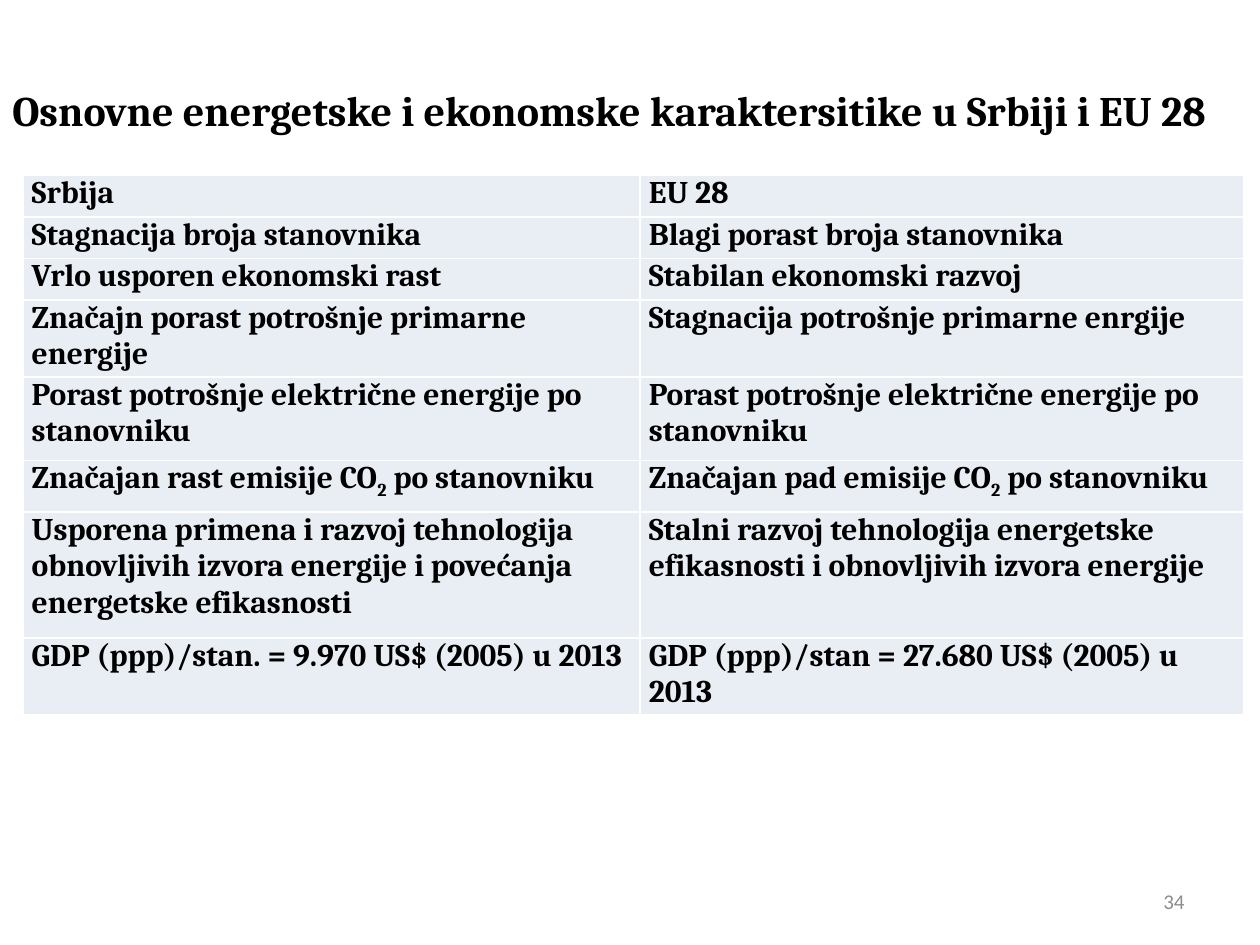
from pptx import Presentation
from pptx.dml.color import RGBColor
from pptx.enum import text
from pptx.oxml import parse_xml
from pptx.oxml import ns
from pptx.util import Cm, Pt

TITLE = "Osnovne energetske i ekonomske karaktersitike u Srbiji i EU 28"
PAGE_NUMBER = "34"
COMPARISON = [
    (0.84, ["Srbija"], ["EU 28"]),
    (0.84, ["Stagnacija broja stanovnika"], ["Blagi porast broja stanovnika"]),
    (0.84, ["Vrlo usporen ekonomski rast"], ["Stabilan ekonomski razvoj"]),
    (1.55, ["Značajn porast potrošnje primarne energije"],
     ["Stagnacija potrošnje primarne enrgije"]),
    (1.68, ["Porast potrošnje električne energije po stanovniku"],
     ["Porast potrošnje električne energije po stanovniku"]),
    (1.04, ["Značajan rast emisije CO", "2", " po stanovniku"],
     ["Značajan pad emisije CO", "2", " po stanovniku"]),
    (2.54, ["Usporena primena i razvoj tehnologija obnovljivih izvora energije "
            "i povećanja energetske efikasnosti"],
     ["Stalni razvoj tehnologija energetske efikasnosti i obnovljivih izvora energije"]),
    (1.55, ["GDP (ppp)/stan. = 9.970 US$ (2005) u 2013"],
     ["GDP (ppp)/stan = 27.680 US$ (2005) u 2013"]),
]
COLUMN_WIDTHS = (12.44, 12.17)

THEME = {
    "title": ("Cambria", 24, "000000", True),
    "body": ("Cambria", 18, "000000", True),
    "number": ("Calibri", 12, "8C8C8C", False),
    "cell": "E9EDF4",
    "border": "FFFFFF",
}


def add_run(paragraph, words, style):
    run = paragraph.add_run()
    run.text = words
    font = run.font
    font.name, size, color, font.bold = THEME[style]
    font.size = Pt(size)
    font.color.rgb = RGBColor.from_string(color)
    return run


def add_label(slide, words, style, box, align):
    frame = slide.shapes.add_textbox(*map(Cm, box)).text_frame
    frame.word_wrap = True
    frame.vertical_anchor = text.MSO_ANCHOR.MIDDLE
    frame.paragraphs[0].alignment = align
    add_run(frame.paragraphs[0], words, style)


def add_borders(cell):
    properties = cell._tc.get_or_add_tcPr()
    for index, side in enumerate(("lnL", "lnR", "lnT", "lnB")):
        properties.insert(index, parse_xml(
            f'<a:{side} {ns.nsdecls("a")} w="12700"><a:solidFill>'
            f'<a:srgbClr val="{THEME["border"]}"/></a:solidFill></a:{side}>'))


def fill_cell(cell, pieces):
    cell.margin_left = cell.margin_right = Cm(0.18)
    cell.margin_top = cell.margin_bottom = 0
    cell.fill.solid()
    cell.fill.fore_color.rgb = RGBColor.from_string(THEME["cell"])
    add_borders(cell)
    for index, words in enumerate(pieces):
        run = add_run(cell.text_frame.paragraphs[0], words, "body")
        if index == 1:
            run.font._element.set("baseline", "-25000")


def add_comparison(slide):
    heights = [row[0] for row in COMPARISON]
    table = slide.shapes.add_table(
        len(COMPARISON), len(COLUMN_WIDTHS), Cm(0.46), Cm(3.53),
        Cm(sum(COLUMN_WIDTHS)), Cm(sum(heights))).table
    table.first_row = table.horz_banding = False
    for column, width in zip(table.columns, COLUMN_WIDTHS):
        column.width = Cm(width)
    for row, (height, *entries) in zip(table.rows, COMPARISON):
        row.height = Cm(height)
        for cell, pieces in zip(row.cells, entries):
            fill_cell(cell, pieces)


def main():
    deck = Presentation()
    deck.slide_width, deck.slide_height = Cm(25.4), Cm(19.05)
    slide = deck.slides.add_slide(deck.slide_layouts[6])
    add_label(slide, PAGE_NUMBER, "number", (18.2, 17.66, 5.93, 1.01),
              text.PP_ALIGN.RIGHT)
    add_comparison(slide)
    add_label(slide, TITLE, "title", (0, 1.58, 25.6, 1.28),
              text.PP_ALIGN.JUSTIFY)
    deck.save("out.pptx")


if __name__ == "__main__":
    main()
